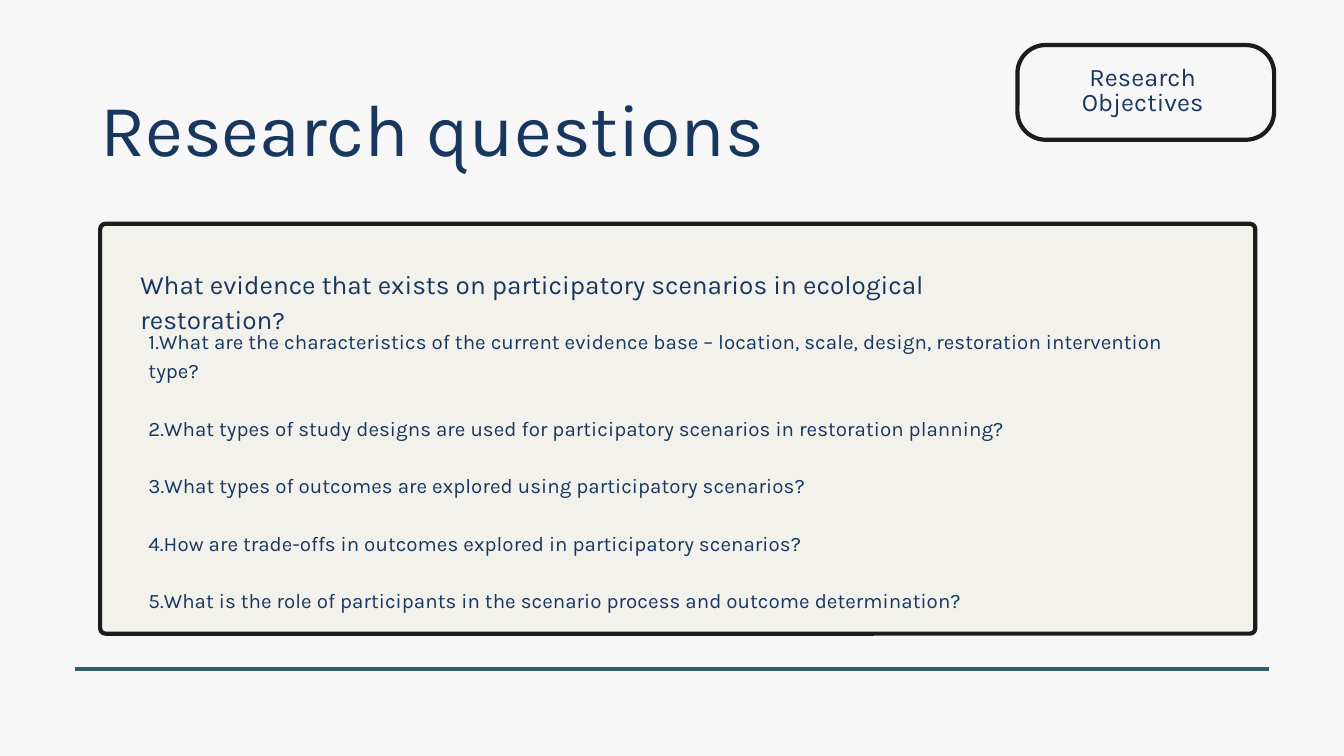
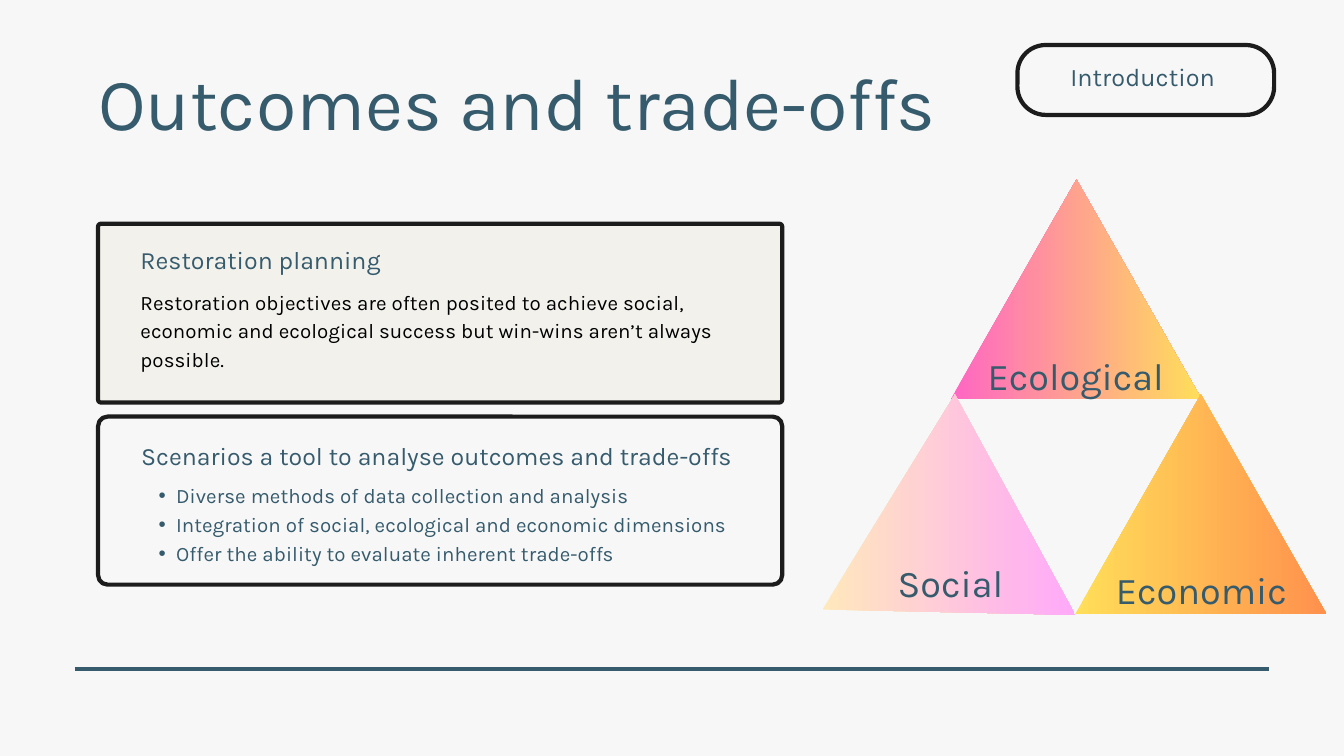
from lxml import etree
from pptx import Presentation
from pptx.dml.color import RGBColor
from pptx.enum.shapes import MSO_CONNECTOR, MSO_SHAPE
from pptx.enum.text import PP_ALIGN
from pptx.oxml.ns import qn
from pptx.util import Inches, Pt

FONT = "Karla"
PAPER, CREAM, INK = "F7F7F7", "F2F1EC", "1C1C1C"
NAVY, TEAL, BLACK = "17375E", "365B6D", "000000"

# size, line spacing, letter spacing (points)
TITLE = (79, 79, 0)
TAG = (27, 27, 0.1)
QUESTION = (28, 37.8, 0)
HEADING = (26.7, 37.3, 0)
BODY = (22, 30.8, 0.1)
LABEL = (40.5, 56.8, 0)

QUESTIONS = [
    "What are the characteristics of the current evidence base – location, scale, design, "
    "restoration intervention type?",
    "What types of study designs are used for participatory scenarios in restoration planning?",
    "What types of outcomes are explored using participatory scenarios?",
    "How are trade-offs in outcomes explored in participatory scenarios?",
    "What is the role of participants in the scenario process and outcome determination?",
]
PLANNING = ("Restoration objectives are often posited to achieve social, economic and "
            "ecological success but win-wins aren’t always possible.")
SCENARIO_POINTS = [
    "Diverse methods of data collection and analysis",
    "Integration of social, ecological and economic dimensions",
    "Offer the ability to evaluate inherent trade-offs",
]
# corners, gradient colours, label, label place
PILLARS = [
    ([(16.02, 2.67), (17.88, 5.94), (14.15, 5.94)], ("FF66C4", "FFDE59"),
     "Ecological", (14.6, 5.13, 2.82, 0.75)),
    ([(17.87, 5.87), (19.74, 9.14), (16, 9.14)], ("FFDE59", "FF914D"),
     "Economic", (16.52, 8.32, 2.72, 0.75)),
    ([(12.24, 9.07), (14.21, 5.87), (16, 9.15)], ("FFE8BC", "FFA9F9"),
     "Social", (13.31, 8.21, 1.67, 0.75)),
]


def rgb(color):
    return RGBColor.from_string(color)


def add_text(s, place, paragraphs, style, color, align=None, gap=0, bullet=False):
    """Each paragraph is a string, or a list of (text, size) runs."""
    size, leading, tracking = style
    tf = s.shapes.add_textbox(*map(Inches, place)).text_frame
    tf.word_wrap = True
    tf.margin_left = tf.margin_right = tf.margin_top = tf.margin_bottom = 0
    for i, runs in enumerate(paragraphs):
        p = tf.paragraphs[0] if i == 0 else tf.add_paragraph()
        p.line_spacing = Pt(leading)
        p.space_after = Pt(gap)
        p.alignment = align
        if bullet:
            p.level = 1
            pPr = p._p.get_or_add_pPr()
            pPr.set("marL", str(Inches(0.52)))
            pPr.set("indent", str(Inches(-0.26)))
            etree.SubElement(pPr, qn("a:buFont")).set("typeface", "Arial")
            etree.SubElement(pPr, qn("a:buChar")).set("char", "•")
        for text, run_size in [(runs, size)] if isinstance(runs, str) else runs:
            r = p.add_run()
            r.text = text
            r.font.name = FONT
            r.font.size = Pt(run_size)
            r.font.color.rgb = rgb(color)
            if tracking:
                r._r.get_or_add_rPr().set("spc", str(round(tracking * 100)))


def add_panel(s, place, radius, fill):
    sp = s.shapes.add_shape(MSO_SHAPE.ROUNDED_RECTANGLE, *map(Inches, place))
    sp.adjustments[0] = radius / min(place[2:])
    sp.shadow.inherit = False
    sp.fill.solid()
    sp.fill.fore_color.rgb = rgb(fill)
    sp.line.color.rgb = rgb(INK)
    sp.line.width = Pt(4.5)


def add_triangle(s, corners, colors):
    first, *rest = [(Inches(x), Inches(y)) for x, y in corners]
    builder = s.shapes.build_freeform(*first)
    builder.add_line_segments(rest, close=True)
    sp = builder.convert_to_shape()
    sp.shadow.inherit = False
    sp.line.fill.background()
    sp.fill.gradient()
    sp.fill.gradient_angle = 0
    for stop, color in zip(sp.fill.gradient_stops, colors):
        stop.color.rgb = rgb(color)


def add_base(prs, title, title_place, tag, tag_height, color):
    """Start a slide with its title, corner tag and bottom rule."""
    s = prs.slides.add_slide(prs.slide_layouts[6])
    s.background.fill.solid()
    s.background.fill.fore_color.rgb = rgb(PAPER)
    add_text(s, title_place, [title], TITLE, color)
    rule = s.shapes.add_connector(MSO_CONNECTOR.STRAIGHT, Inches(1.11), Inches(9.96),
                                  Inches(18.88), Inches(9.96))
    rule.line.color.rgb = rgb(TEAL)
    rule.line.width = Pt(4.5)
    etree.SubElement(rule._element.spPr, qn("a:effectLst"))
    add_panel(s, (15.14, 0.67, 3.82, tag_height), 0.42, PAPER)
    add_text(s, (15.56, 0.99, 2.89, tag_height - 0.64), [tag], TAG, color, PP_ALIGN.CENTER)
    return s


def build_questions(prs):
    s = add_base(prs, "Research questions", (1.49, 1.45, 10.29, 1.16),
                 "Research Objectives", 1.41, NAVY)
    add_panel(s, (1.49, 3.33, 17.19, 6.1), 0.08, CREAM)
    numbered = [f"{n}.{q}" for n, q in enumerate(QUESTIONS, 1)]
    add_text(s, (2.21, 4.84, 15.74, 3.89), numbered, BODY, NAVY, gap=BODY[1])
    main_question = [
        ("What evidence that exists on participatory scenarios in ecological restoration", 28),
        ("?", 27),
    ]
    add_text(s, (2.09, 3.93, 13.26, 1.03), [main_question], QUESTION, NAVY)


def build_outcomes(prs):
    s = add_base(prs, "Outcomes and trade-offs", (1.46, 1.07, 13.2, 1.16),
                 "Introduction", 1.04, TEAL)
    add_panel(s, (1.46, 3.33, 10.18, 2.66), 0.04, CREAM)
    add_text(s, (2.09, 3.57, 3.87, 0.5), ["Restoration planning"], HEADING, TEAL)
    add_text(s, (2.09, 4.25, 8.9, 1.27), [PLANNING], BODY, BLACK)

    add_panel(s, (1.46, 6.2, 10.18, 2.5), 0.14, PAPER)
    add_text(s, (2.1, 6.49, 8.9, 0.5),
             ["Scenarios a tool to analyse outcomes and trade-offs"], HEADING, TEAL)
    add_text(s, (2.1, 7.13, 8.9, 1.27), SCENARIO_POINTS, BODY, TEAL, bullet=True)

    for corners, colors, _, _ in PILLARS:
        add_triangle(s, corners, colors)
    for _, _, label, place in PILLARS:
        add_text(s, place, [label], LABEL, TEAL, PP_ALIGN.CENTER)


def main():
    prs = Presentation()
    prs.slide_width, prs.slide_height = Inches(20), Inches(11.25)
    build_questions(prs)
    build_outcomes(prs)
    prs.save("out.pptx")


if __name__ == "__main__":
    main()
